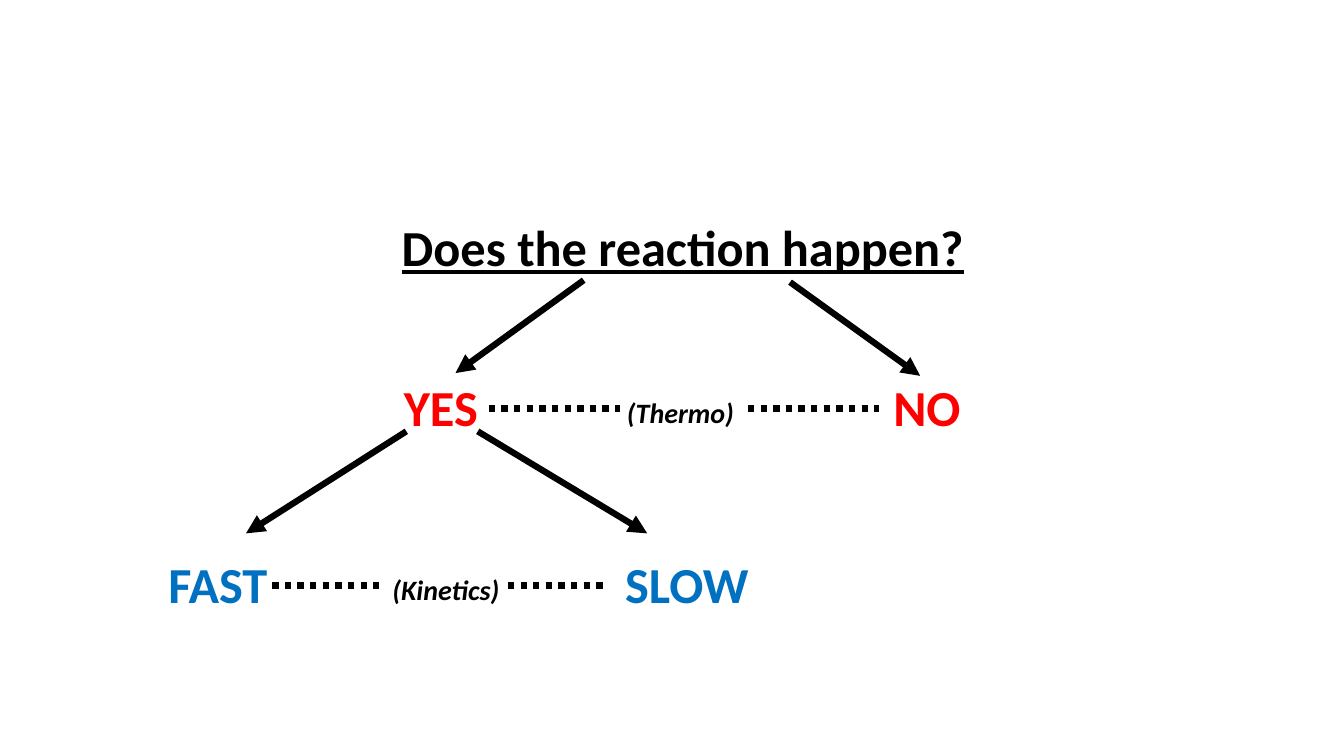
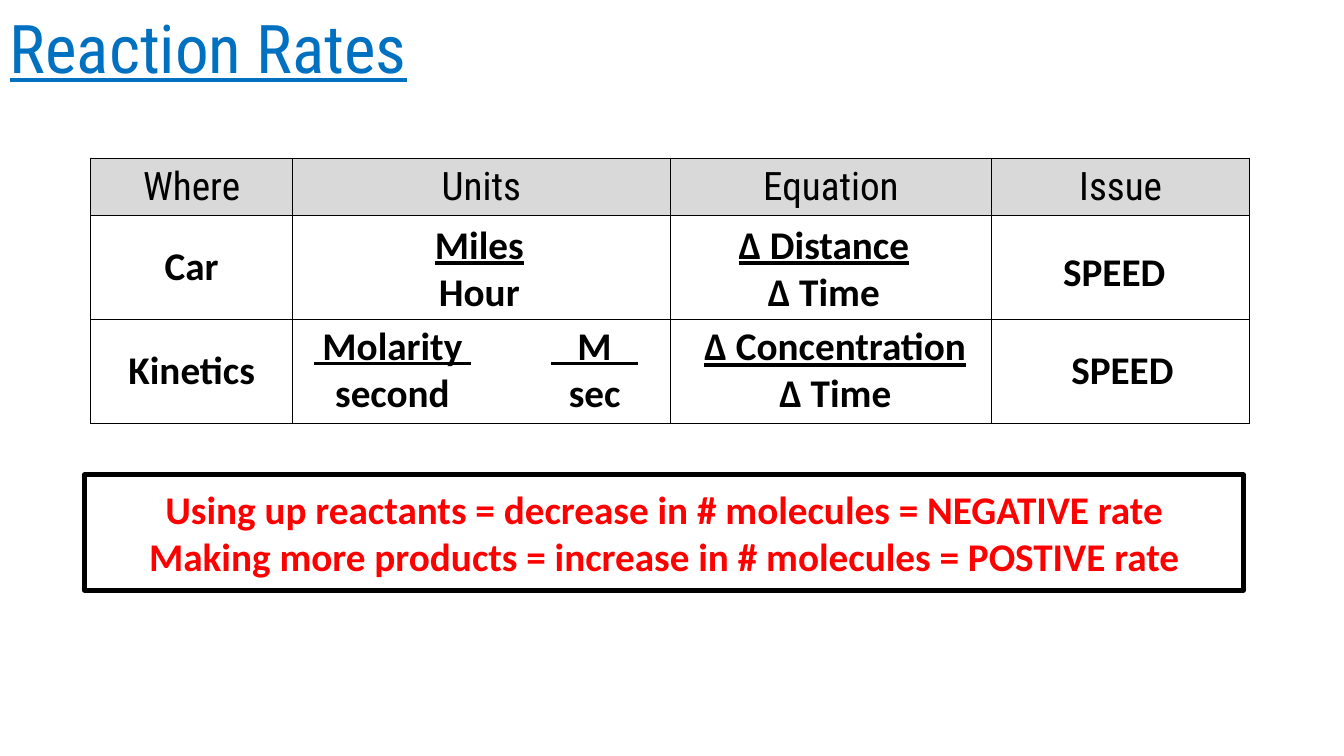
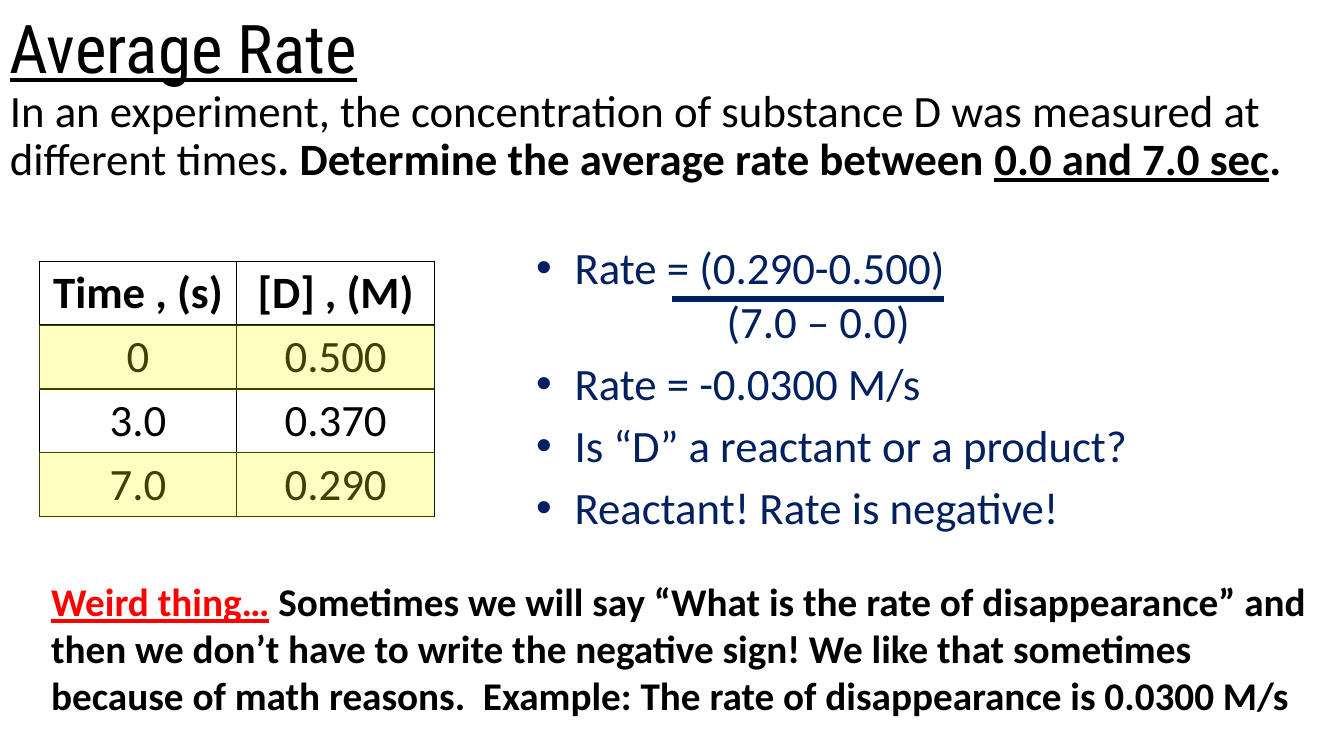
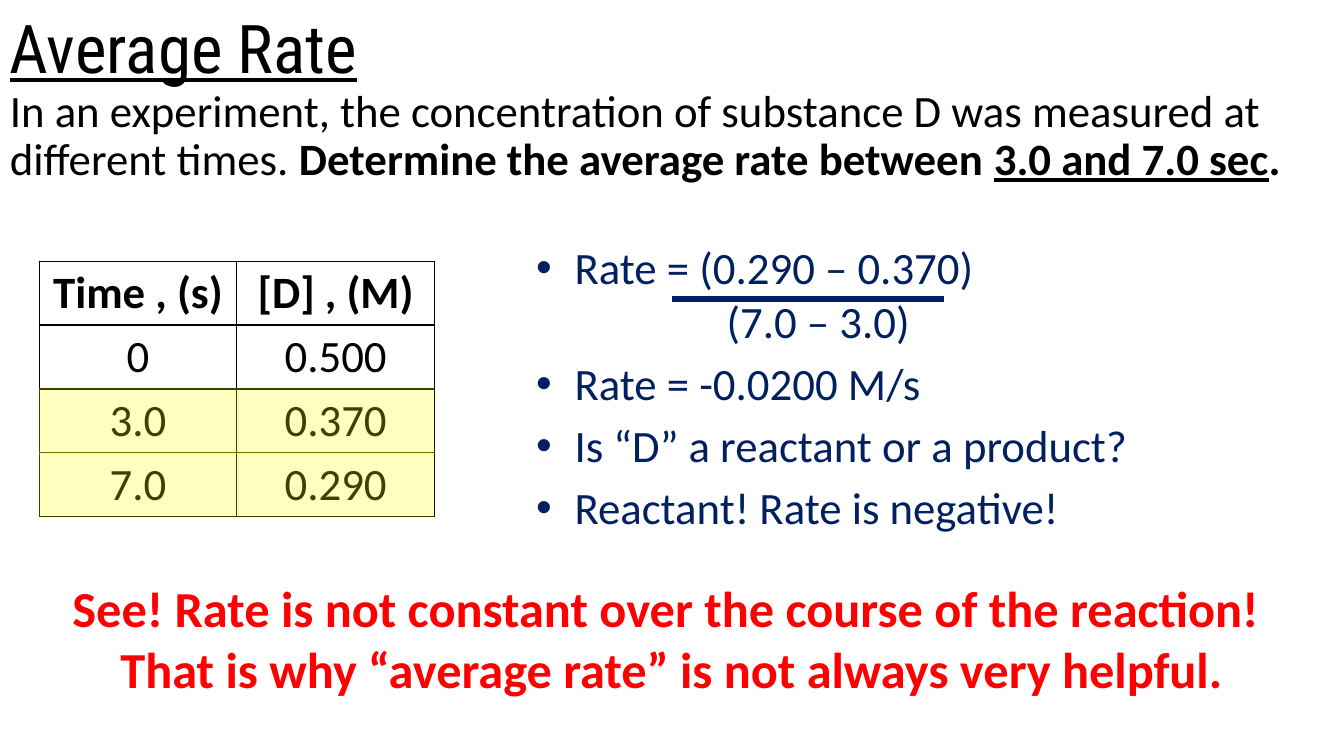
from lxml import etree
from pptx import Presentation
from pptx.dml.color import RGBColor
from pptx.enum import dml, shapes, text
from pptx.oxml import ns
from pptx.util import Cm, Pt

BLACK = RGBColor(0x00, 0x00, 0x00)
WHITE = RGBColor(0xFF, 0xFF, 0xFF)
RED = RGBColor(0xFF, 0x00, 0x00)
BLUE = RGBColor(0x00, 0x70, 0xC0)
NAVY = RGBColor(0x00, 0x20, 0x60)
GREY = RGBColor(0xD9, 0xD9, 0xD9)
YELLOW = RGBColor(0xFF, 0xFF, 0x00)

BODY = {"name": "Calibri", "size": Pt(32), "color": BLACK}
TITLE = {"name": "Roboto Condensed", "size": Pt(48), "color": BLACK, "underline": True}
HEADER = {"name": "Roboto Condensed", "size": Pt(28), "color": BLACK}
STRONG = {**BODY, "size": Pt(28), "bold": True}
BIG = {**STRONG, "size": Pt(36)}
REMARK = {**STRONG, "size": Pt(20), "italic": True}
UNDERLINED = {"underline": True}

CENTER = {"alignment": text.PP_ALIGN.CENTER}
LEFT = {"alignment": text.PP_ALIGN.LEFT}
NO_INSETS = dict.fromkeys(("margin_left", "margin_right", "margin_top", "margin_bottom"), 0)


def set_values(target, values):
    for name, value in values.items():
        setattr(target, name, value)


def add_xml(parent, tag, **attributes):
    return etree.SubElement(parent, ns.qn(tag), attributes)


def write(frame, paragraphs, style, layout=LEFT):
    """Fill a frame; a paragraph is a string or a list of (text, style changes)."""
    for index, content in enumerate(paragraphs):
        paragraph = frame.paragraphs[0] if index == 0 else frame.add_paragraph()
        set_values(paragraph, layout)
        for words, changes in [(content, {})] if isinstance(content, str) else content:
            run = paragraph.add_run()
            run.text = words
            values = {**style, **changes}
            run.font.color.rgb = values.pop("color")
            set_values(run.font, values)


def add_text(slide, box, paragraphs, style, layout=LEFT, anchor=text.MSO_ANCHOR.TOP):
    """Box is left, top, width and height in centimetres, here and below."""
    frame = slide.shapes.add_textbox(*map(Cm, box)).text_frame
    set_values(frame, {"word_wrap": True, "vertical_anchor": anchor})
    write(frame, paragraphs, style, layout)
    return frame


def add_rectangle(slide, box, fill, line=None, width=1):
    shape = slide.shapes.add_shape(shapes.MSO_SHAPE.RECTANGLE, *map(Cm, box))
    shape.shadow.inherit = False
    shape.fill.solid()
    shape.fill.fore_color.rgb = fill
    if line is None:
        shape.line.fill.background()
    else:
        shape.line.color.rgb = line
        shape.line.width = Pt(width)
    return shape


def add_panel(slide, box, paragraphs, style, line=WHITE, width=1):
    """White rectangle with centred text."""
    frame = add_rectangle(slide, box, WHITE, line, width).text_frame
    set_values(frame, {"word_wrap": True, "vertical_anchor": text.MSO_ANCHOR.MIDDLE})
    write(frame, paragraphs, style, CENTER)
    return frame


def add_line(slide, start, end, color=BLACK, width=4.5, arrow=False, dotted=False):
    line = slide.shapes.add_connector(shapes.MSO_CONNECTOR.STRAIGHT, *map(Cm, (*start, *end)))
    line.line.color.rgb = color
    line.line.width = Pt(width)
    if dotted:
        line.line.dash_style = dml.MSO_LINE.ROUND_DOT
    if arrow:
        add_xml(line.line._get_or_add_ln(), "a:tailEnd", type="triangle")
    add_xml(line._element.spPr, "a:effectLst")


def border_cell(cell):
    properties = cell._tc.get_or_add_tcPr()
    for side in ("a:lnL", "a:lnR", "a:lnT", "a:lnB"):
        fill = add_xml(add_xml(properties, side, w=str(Pt(1))), "a:solidFill")
        add_xml(fill, "a:srgbClr", val=str(BLACK))


def add_grid(slide, left, top, widths, heights, rows, header, body, header_fill=None):
    box = (left, top, sum(widths), sum(heights))
    table = slide.shapes.add_table(len(rows), len(widths), *map(Cm, box)).table
    set_values(table, {"first_row": False, "horz_banding": False})
    for column, width in zip(table.columns, widths):
        column.width = Cm(width)
    for index, (row, height, words) in enumerate(zip(table.rows, heights, rows)):
        row.height = Cm(height)
        for cell, word in zip(row.cells, words):
            border_cell(cell)
            if index == 0 and header_fill:
                cell.fill.solid()
                cell.fill.fore_color.rgb = header_fill
            else:
                cell.fill.background()
            cell.vertical_anchor = text.MSO_ANCHOR.MIDDLE
            if word:
                write(cell.text_frame, [word], body if index else header, CENTER)


def add_title(slide, words, color=BLACK):
    add_text(slide, (0, 0.03, 13.49, 2.31), [words], {**TITLE, "color": color})


def add_label(slide, x, y, words, style):
    """Text centred on a point."""
    width, height = 16, 1.8
    add_text(slide, (x - width / 2, y - height / 2, width, height), [words], style,
             CENTER, text.MSO_ANCHOR.MIDDLE)


def add_choice(slide, x, y, answers, topic, color, dots, arrows):
    """Two answers joined by dots through a topic; all places count from the first answer."""
    for offset, words in answers:
        add_label(slide, x + offset, y, words, {**BIG, "color": color})
    offset, words = topic
    add_label(slide, x + offset, y + 0.16, words, REMARK)
    for start, end in dots:
        add_line(slide, (x + start, y + 0.06), (x + end, y + 0.06), dotted=True)
    for (x1, y1), (x2, y2) in arrows:
        add_line(slide, (x + x1, y + y1), (x + x2, y + y2), arrow=True)


def build_decision_tree(slide):
    add_label(slide, 17.21, 6.22, "Does the reaction happen?", {**BIG, **UNDERLINED})
    add_choice(slide, 11.11, 10.23, [(0, "YES"), (12.25, "NO")], (6.04, "(Thermo)"), RED,
               [(1.21, 4.51), (7.74, 11.04)],
               [((3.6, -3.17), (0.37, -0.83)), ((8.8, -3.12), (12.08, -0.76))])
    add_choice(slide, 5.49, 14.69, [(0, "FAST"), (11.82, "SLOW")], (5.75, "(Kinetics)"), BLUE,
               [(1.37, 4.16), (7.31, 9.85)],
               [((4.75, -3.82), (0.71, -1.25)), ((6.55, -3.82), (10.82, -1.25))])


def add_fraction(slide, box, numerator, denominator, wide_bar=False):
    """Underline the numerator, or draw a bar across the whole box."""
    style = {} if wide_bar else UNDERLINED
    frame = add_panel(slide, box, [[(numerator, style)], denominator], STRONG)
    if wide_bar:
        set_values(frame, NO_INSETS)
        left, top, width, _ = box
        add_line(slide, (left, top + 0.97), (left + width, top + 0.97), width=2.25)


def add_rate_table(slide, left, top):
    rows = [("Where", "Units", "Equation", "Issue"),
            ("Car", "", "", ""), ("Kinetics", "", "", "")]
    add_grid(slide, left, top, (5.08, 9.52, 8.1, 6.5), (1.44, 2.62, 2.62), rows,
             HEADER, STRONG, GREY)
    height, car, kinetics = 2.18, top + 1.65, top + 4.21
    add_fraction(slide, (left + 6.78, car, 6.02, height), "Miles", "Hour")
    add_fraction(slide, (left + 15.46, car, 6.02, height), "Δ Distance", "Δ Time")
    add_fraction(slide, (left + 5.62, kinetics, 3.96, height), "Molarity", "second", True)
    add_fraction(slide, (left + 11.6, kinetics, 2.19, height), "M", "sec", True)
    add_fraction(slide, (left + 14.91, kinetics, 7.7, height), "∆ Concentration", "∆ Time")
    add_panel(slide, (left + 22.78, car + 0.1, 6.02, height), ["SPEED"], STRONG)
    add_panel(slide, (left + 23.19, kinetics, 5.61, height), ["SPEED"], STRONG)


def build_reaction_rates(slide):
    add_title(slide, "Reaction Rates", BLUE)
    add_rate_table(slide, 2.29, 3.99)
    add_panel(slide, (2.13, 11.96, 29.21, 2.92),
              ["Using up reactants = decrease in # molecules = NEGATIVE rate",
               "Making more products = increase in # molecules = POSTIVE rate"],
              {**STRONG, "color": RED}, BLACK, 3)


def add_measurements(slide, left, top, marked_rows):
    rows = [("Time , (s)", "[D] , (M)"), ("0", "0.500"), ("3.0", "0.370"), ("7.0", "0.290")]
    column, height = 4.98, 1.6
    add_grid(slide, left, top, [column] * 2, [height] * len(rows), rows,
             {**BODY, "bold": True}, BODY)
    for row in marked_rows:
        marker = add_rectangle(slide, (left, top + row * height, 2 * column, 1.68), YELLOW)
        color = marker._element.spPr.find(".//" + ns.qn("a:srgbClr"))
        add_xml(color, "a:alpha", val="25000")


def add_working(slide, left, top, numerator, denominator, rate):
    """Bulleted calculation with a bar under the numerator."""
    lines = [f"Rate = {numerator}", denominator, f"Rate = {rate} M/s",
             "Is “D” a reactant or a product?", "Reactant! Rate is negative!"]
    frame = add_text(slide, (left, top, 16.66, 7.4), lines, {**BODY, "color": NAVY})
    for index, paragraph in enumerate(frame.paragraphs):
        properties = paragraph._p.get_or_add_pPr()
        if index == 1:
            properties.set("marL", str(Cm(4.8)))
            continue
        paragraph.space_before = Pt(6 if index else 0)
        properties.set("marL", str(Cm(0.97)))
        properties.set("indent", str(Cm(-0.97)))
        add_xml(properties, "a:buFont", typeface="Arial")
        add_xml(properties, "a:buChar", char="•")
    add_line(slide, (left + 3.68, top + 1.62), (left + 10.54, top + 1.62), NAVY)


def build_average_rate(slide, stop, interval, marked_rows, working, remark, style, layout):
    add_title(slide, "Average Rate")
    question = [("In an experiment, the concentration of substance D was measured at "
                 "different times", {}),
                (".", {"bold": stop}),
                (" Determine the average rate between ", {"bold": True}),
                (interval, {"bold": True, "underline": True}),
                (".", {"bold": True})]
    add_text(slide, (0, 2.11, 33.32, 3), [question], BODY, {"line_spacing": 0.9})
    add_measurements(slide, 0.99, 6.58, marked_rows)
    add_working(slide, 13.26, 5.92, *working)
    add_text(slide, (1.04, 14.43, 32.28 if layout is LEFT else 31.78, 3.84),
             remark, style, layout)


def main():
    presentation = Presentation()
    set_values(presentation, {"slide_width": Cm(33.87), "slide_height": Cm(19.05)})
    blank = presentation.slide_layouts[6]
    tree, rates, first, second = [presentation.slides.add_slide(blank) for _ in range(4)]
    build_decision_tree(tree)
    build_reaction_rates(rates)
    weird_thing = [("Weird thing…", {"color": RED, "underline": True}),
                   (" Sometimes we will say “What is the rate of disappearance” and then we "
                    "don’t have to write the negative sign! We like that sometimes because of "
                    "math reasons.  Example: The rate of disappearance is 0.0300 M/s", {})]
    build_average_rate(first, True, "0.0 and 7.0 sec", (1, 3),
                       ("(0.290-0.500)", "(7.0 – 0.0)", "-0.0300"),
                       [weird_thing], STRONG, LEFT)
    build_average_rate(second, False, "3.0 and 7.0 sec", (2, 3),
                       ("(0.290 – 0.370)", "(7.0 – 3.0)", "-0.0200"),
                       ["See! Rate is not constant over the course of the reaction! ",
                        "That is why “average rate” is not always very helpful."],
                       {**BIG, "color": RED}, CENTER)
    presentation.save("out.pptx")


if __name__ == "__main__":
    main()
